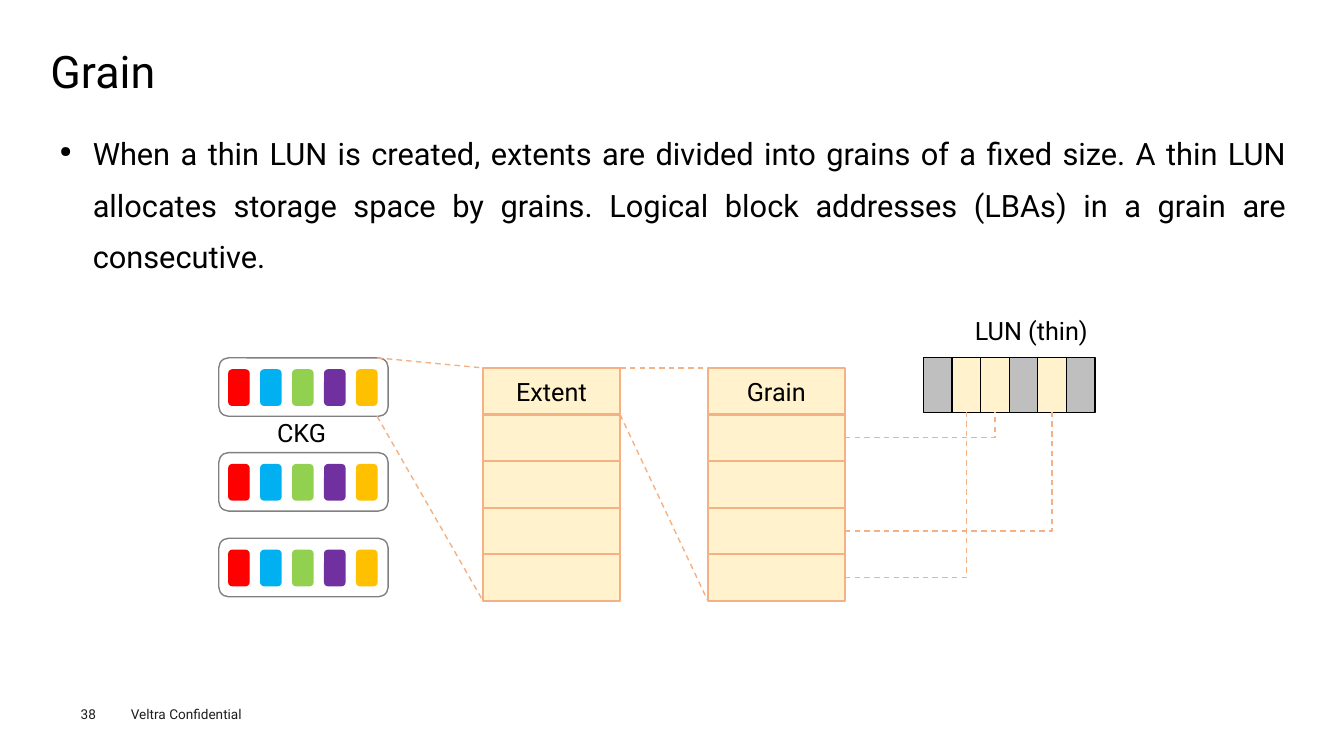
"""Build a slide on how extents are divided into grains for a thin LUN."""
from lxml import etree
from pptx import Presentation
from pptx.dml.color import RGBColor
from pptx.enum.dml import MSO_LINE
from pptx.enum.shapes import MSO_CONNECTOR, MSO_SHAPE
from pptx.enum.text import MSO_ANCHOR, PP_ALIGN
from pptx.oxml.ns import qn
from pptx.util import Inches, Pt

RECT, ROUNDED = MSO_SHAPE.RECTANGLE, MSO_SHAPE.ROUNDED_RECTANGLE
STRAIGHT, ELBOW = MSO_CONNECTOR.STRAIGHT, MSO_CONNECTOR.ELBOW
DASH = MSO_LINE.DASH
LEFT, CENTER, JUSTIFY = PP_ALIGN.LEFT, PP_ALIGN.CENTER, PP_ALIGN.JUSTIFY
MIDDLE = MSO_ANCHOR.MIDDLE
BOTTOM_SIDE, RIGHT_SIDE = 2, 3

BLACK = RGBColor(0x00, 0x00, 0x00)
WHITE = RGBColor(0xFF, 0xFF, 0xFF)
FOOTER_INK = RGBColor(0x1D, 0x1D, 0x1B)
FRAME_GRAY = RGBColor(0x80, 0x80, 0x80)
FREE_GRAY = RGBColor(0xBF, 0xBF, 0xBF)
CREAM = RGBColor(0xFF, 0xF2, 0xCC)
ORANGE = RGBColor(0xF4, 0xB1, 0x83)
CHUNK_COLORS = (
    RGBColor(0xFF, 0x00, 0x00),
    RGBColor(0x00, 0xB0, 0xF0),
    RGBColor(0x92, 0xD0, 0x50),
    RGBColor(0x70, 0x30, 0xA0),
    RGBColor(0xFF, 0xC0, 0x00),
)

FONT = "Roboto"
GRID = Inches(0.1)
STACK_TOP, STACK_WIDTH, STACK_HEIGHT, STACK_CELLS = 36.5, 13.6, 23.1, 5
STACK_BOTTOM = STACK_TOP + STACK_HEIGHT
EXTENT_LEFT, GRAIN_LEFT = 47.9, 70.2
CKG_LEFT, CKG_TOPS, CKG_WIDTH, CKG_HEIGHT = 21.7, (35.5, 44.9, 53.4), 16.8, 5.8
LUN_LEFT, LUN_TOP, LUN_WIDTH, LUN_HEIGHT = 91.6, 35.5, 17, 5.4
LUN_COLORS = (FREE_GRAY, CREAM, CREAM, FREE_GRAY, CREAM, FREE_GRAY)


def cells(*counts):
    """Turn counts of grid cells into lengths."""
    return [round(count * GRID) for count in counts]


def write(frame, text, size, color=BLACK, align=LEFT):
    """Put one paragraph in a text frame and return it."""
    paragraph = frame.paragraphs[0]
    paragraph.text = text
    paragraph.alignment = align
    paragraph.font.size = Pt(size)
    paragraph.font.name = FONT
    paragraph.font.color.rgb = color
    return paragraph


def add_bullet(paragraph, indent):
    """Give a paragraph a small round bullet with a hanging indent."""
    properties = paragraph._p.get_or_add_pPr()
    properties.set("marL", str(indent))
    properties.set("indent", str(-indent))
    etree.SubElement(properties, qn("a:buSzPct"), val="50000")
    etree.SubElement(properties, qn("a:buChar"), char="●")


def add_text_area(slide, place, margins=(0.1, 0.05), wrap=True):
    """Add an empty text box and return its text frame."""
    frame = slide.shapes.add_textbox(*cells(*place)).text_frame
    frame.word_wrap = wrap
    frame.margin_left = frame.margin_right = Inches(margins[0])
    frame.margin_top = frame.margin_bottom = Inches(margins[1])
    return frame


def add_block(slide, kind, place, fill, outline, width=1):
    """Add a filled and outlined shape."""
    block = slide.shapes.add_shape(kind, *cells(*place))
    block.shadow.inherit = False
    block.fill.solid()
    block.fill.fore_color.rgb = fill
    block.line.color.rgb = outline
    block.line.width = Pt(width)
    return block


def add_chunk_group(slide, top):
    """Add one CKG frame with its row of coloured chunks."""
    add_block(slide, ROUNDED, (CKG_LEFT, top, CKG_WIDTH, CKG_HEIGHT), WHITE, FRAME_GRAY)
    for index, color in enumerate(CHUNK_COLORS):
        left = CKG_LEFT + 1 + index * 3.17
        add_block(slide, ROUNDED, (left, top + 1.2, 2, 3.5), color, color)


def add_stack(slide, left, heading):
    """Add a column of equal cells, the first one named."""
    height = STACK_HEIGHT / STACK_CELLS
    stack = [
        add_block(slide, RECT, (left, STACK_TOP + row * height, STACK_WIDTH, height),
                  CREAM, ORANGE, 1.5)
        for row in range(STACK_CELLS)
    ]
    frame = stack[0].text_frame
    frame.vertical_anchor = MIDDLE
    write(frame, heading, 18, align=CENTER)
    return stack


def add_lun(slide):
    """Add the row of LUN cells."""
    width = LUN_WIDTH / len(LUN_COLORS)
    return [
        add_block(slide, RECT, (LUN_LEFT + column * width, LUN_TOP, width, LUN_HEIGHT),
                  color, BLACK)
        for column, color in enumerate(LUN_COLORS)
    ]


def add_dashed(slide, kind, ends):
    """Add a dashed connector between two points."""
    link = slide.shapes.add_connector(kind, *ends)
    link.line.color.rgb = ORANGE
    link.line.width = Pt(1)
    link.line.dash_style = DASH
    etree.SubElement(link._element.spPr, qn("a:effectLst"))
    return link


def map_grain(slide, grain, lun_cell):
    """Join a grain's right side to the bottom of a LUN cell."""
    ends = (grain.left + grain.width, grain.top + grain.height // 2,
            lun_cell.left + lun_cell.width // 2, lun_cell.top + lun_cell.height)
    link = add_dashed(slide, ELBOW, ends)
    link._element.spPr.find(qn("a:prstGeom")).set("prst", "bentConnector2")
    link.begin_connect(grain, RIGHT_SIDE)
    link.end_connect(lun_cell, BOTTOM_SIDE)


def add_wording(slide):
    """Add the title, the explanation and the footer."""
    title = write(add_text_area(slide, (5, 4.9, 123.5, 5.4), (0, 0)), "Grain", 32)
    title.line_spacing = 0.9
    body = add_text_area(slide, (5, 11.5, 123.5, 53.3), (0.09, 0.04))
    add_bullet(body.paragraphs[0], Inches(0.33))
    explanation = write(
        body,
        "When a thin LUN is created, extents are divided into grains of a fixed size. "
        "A thin LUN allocates storage space by grains. "
        "Logical block addresses (LBAs) in a grain are consecutive.",
        22, align=JUSTIFY)
    explanation.line_spacing = 1.4
    write(add_text_area(slide, (12, 69.5, 16, 2.7)), "Veltra Confidential", 9.7, FOOTER_INK)
    write(add_text_area(slide, (8, 70, 5.5, 1.6), (0, 0)), "38", 9.7, FOOTER_INK)


def add_diagram(slide):
    """Add the path from chunk groups through extents and grains to the LUN."""
    for top in CKG_TOPS:
        add_chunk_group(slide, top)
    write(add_text_area(slide, (26.5, 40.9, 6.9, 4), wrap=False), "CKG", 18)
    add_stack(slide, EXTENT_LEFT, "Extent")
    grains = add_stack(slide, GRAIN_LEFT, "Grain")
    lun = add_lun(slide)
    write(add_text_area(slide, (95.7, 30.8, 16.4, 4)), "LUN (thin)", 18)

    ckg_corner = CKG_LEFT + CKG_WIDTH - 1.1
    extent_right = EXTENT_LEFT + STACK_WIDTH
    extent_bottom = STACK_TOP + STACK_HEIGHT / STACK_CELLS
    for ends in (
        (ckg_corner, CKG_TOPS[0], EXTENT_LEFT, STACK_TOP),
        (ckg_corner, CKG_TOPS[0] + CKG_HEIGHT, EXTENT_LEFT, STACK_BOTTOM),
        (extent_right, STACK_TOP, GRAIN_LEFT, STACK_TOP),
        (extent_right, extent_bottom, GRAIN_LEFT, STACK_BOTTOM),
    ):
        add_dashed(slide, STRAIGHT, cells(*ends))
    for grain, lun_cell in ((1, 2), (4, 1), (3, 4)):
        map_grain(slide, grains[grain], lun[lun_cell])


def main():
    """Create the presentation and save it."""
    deck = Presentation()
    deck.slide_width, deck.slide_height = Inches(13.33), Inches(7.5)
    slide = deck.slides.add_slide(deck.slide_layouts[6])
    add_wording(slide)
    add_diagram(slide)
    deck.save("out.pptx")


if __name__ == "__main__":
    main()
